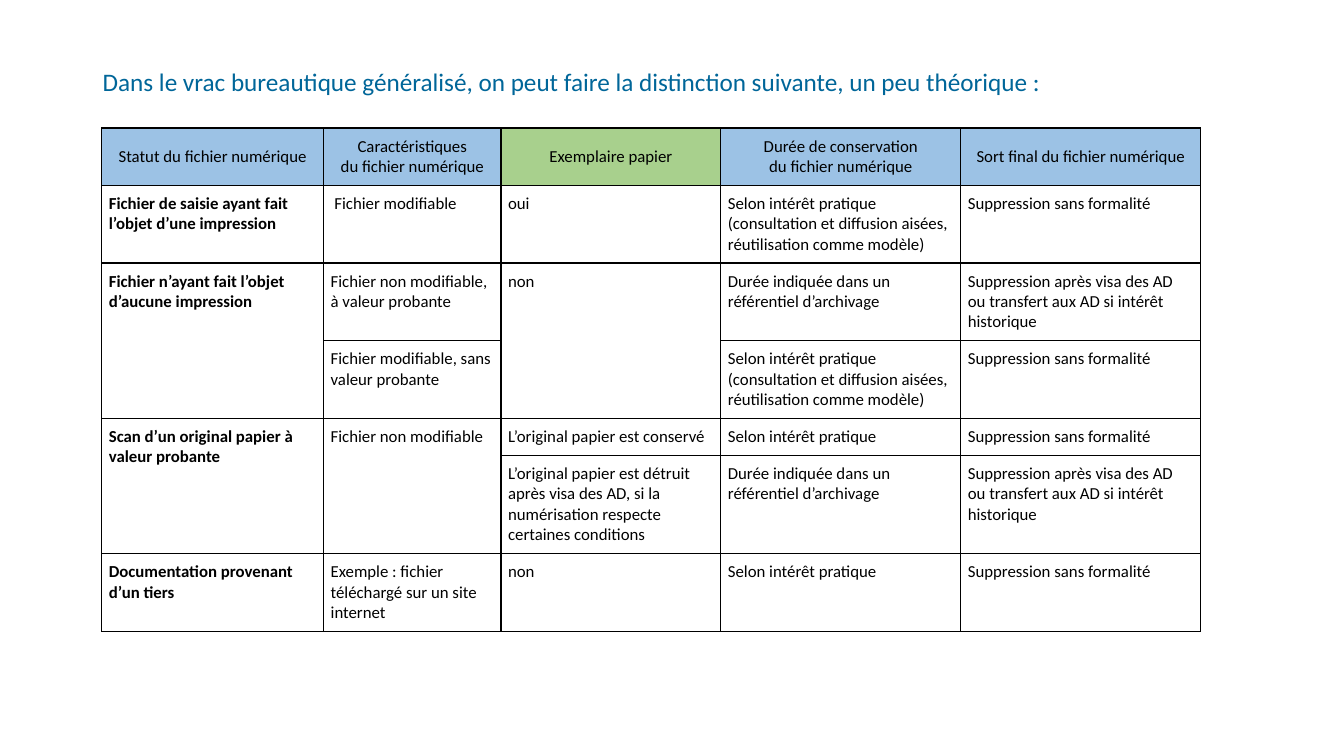
from dataclasses import dataclass

from lxml.etree import SubElement
from pptx import Presentation
from pptx.dml.color import RGBColor
from pptx.enum.text import MSO_ANCHOR, PP_ALIGN
from pptx.oxml.ns import qn
from pptx.util import Emu, Pt

PX = 9144  # EMU per px, 100 px to the inch


@dataclass(frozen=True)
class Theme:
    font: str = "Calibri"
    title_size: int = 18
    table_size: int = 12
    title: str = "006699"
    text: str = "000000"
    border: str = "000000"
    header: str = "9CC2E5"
    header_paper: str = "A8D08D"
    border_width: int = 1


THEME = Theme()

COLUMNS = [220, 176, 218, 238, 238]
ROWS = [57, 76, 76, 76, 37, 96, 76]
PAPER_COLUMN = 2

TITLE = ("Dans le vrac bureautique généralisé, on peut faire la distinction "
         "suivante, un peu théorique :")
PRACTICAL = "Selon intérêt pratique"
REUSE = PRACTICAL + " (consultation et diffusion aisées, réutilisation comme modèle)"
SCHEDULE = "Durée indiquée dans un référentiel d’archivage"
DELETE = "Suppression sans formalité"
APPROVAL = "Suppression après visa des AD\nou transfert aux AD si intérêt historique"

# None continues the cell above
CELLS = [
    ["Statut du fichier numérique", "Caractéristiques\ndu fichier numérique",
     "Exemplaire papier", "Durée de conservation\ndu fichier numérique",
     "Sort final du fichier numérique"],
    ["Fichier de saisie ayant fait l’objet d’une impression",
     " Fichier modifiable", "oui", REUSE, DELETE],
    ["Fichier n’ayant fait l’objet d’aucune impression",
     "Fichier non modifiable, à valeur probante", "non", SCHEDULE, APPROVAL],
    [None, "Fichier modifiable, sans valeur probante", None, REUSE, DELETE],
    ["Scan d’un original papier à valeur probante", "Fichier non modifiable",
     "L’original papier est conservé", PRACTICAL, DELETE],
    [None, None,
     "L’original papier est détruit après visa des AD, si la numérisation "
     "respecte certaines conditions", SCHEDULE, APPROVAL],
    ["Documentation provenant d’un tiers",
     "Exemple : fichier téléchargé sur un site internet", "non",
     PRACTICAL, DELETE],
]


def px(value):
    return Emu(value * PX)


def add_run(paragraph, text, size, color, bold=False):
    run = paragraph.add_run()
    run.text = text
    run.font.name = THEME.font
    run.font.size = Pt(size)
    run.font.bold = bold
    run.font.color.rgb = RGBColor.from_string(color)


def add_borders(cell):
    properties = cell._tc.get_or_add_tcPr()
    for side in ("a:lnL", "a:lnR", "a:lnT", "a:lnB"):
        line = SubElement(properties, qn(side), w=str(Pt(THEME.border_width)))
        fill = SubElement(line, qn("a:solidFill"))
        SubElement(fill, qn("a:srgbClr"), val=THEME.border)


def style_cell(cell, is_header, column):
    cell.margin_left = cell.margin_right = px(7)
    cell.margin_top = cell.margin_bottom = px(8)
    cell.vertical_anchor = MSO_ANCHOR.MIDDLE if is_header else MSO_ANCHOR.TOP
    add_borders(cell)
    if is_header:
        color = THEME.header_paper if column == PAPER_COLUMN else THEME.header
        cell.fill.solid()
        cell.fill.fore_color.rgb = RGBColor.from_string(color)
    else:
        cell.fill.background()


def write_cell(cell, text, is_header, bold):
    frame = cell.text_frame
    for index, line in enumerate(text.split("\n")):
        paragraph = frame.add_paragraph() if index else frame.paragraphs[0]
        paragraph.alignment = PP_ALIGN.CENTER if is_header else PP_ALIGN.LEFT
        add_run(paragraph, line, THEME.table_size, THEME.text, bold)


def add_title(slide, left, top, width, height):
    box = slide.shapes.add_textbox(px(left), px(top), px(width), px(height))
    box.text_frame.word_wrap = True
    paragraph = box.text_frame.paragraphs[0]
    paragraph.line_spacing = 0.9
    add_run(paragraph, TITLE, THEME.title_size, THEME.title)


def add_status_table(slide, left, top):
    table = slide.shapes.add_table(
        len(ROWS), len(COLUMNS), px(left), px(top),
        px(sum(COLUMNS)), px(sum(ROWS))).table
    table.first_row = table.horz_banding = False
    for column, width in zip(table.columns, COLUMNS):
        column.width = px(width)
    for row, height in zip(table.rows, ROWS):
        row.height = px(height)

    for row, texts in enumerate(CELLS):
        for column, text in enumerate(texts):
            cell = table.cell(row, column)
            is_header = row == 0
            style_cell(cell, is_header, column)
            if text is None:
                table.cell(row - 1, column).merge(cell)
            else:
                write_cell(cell, text, is_header, not is_header and column == 0)


def main():
    presentation = Presentation()
    presentation.slide_width, presentation.slide_height = px(1333), px(750)
    slide = presentation.slides.add_slide(presentation.slide_layouts[6])
    # File status table
    add_status_table(slide, 101, 127)
    # Title line
    add_title(slide, 92, 64, 1150, 45)
    presentation.save("out.pptx")


if __name__ == "__main__":
    main()
